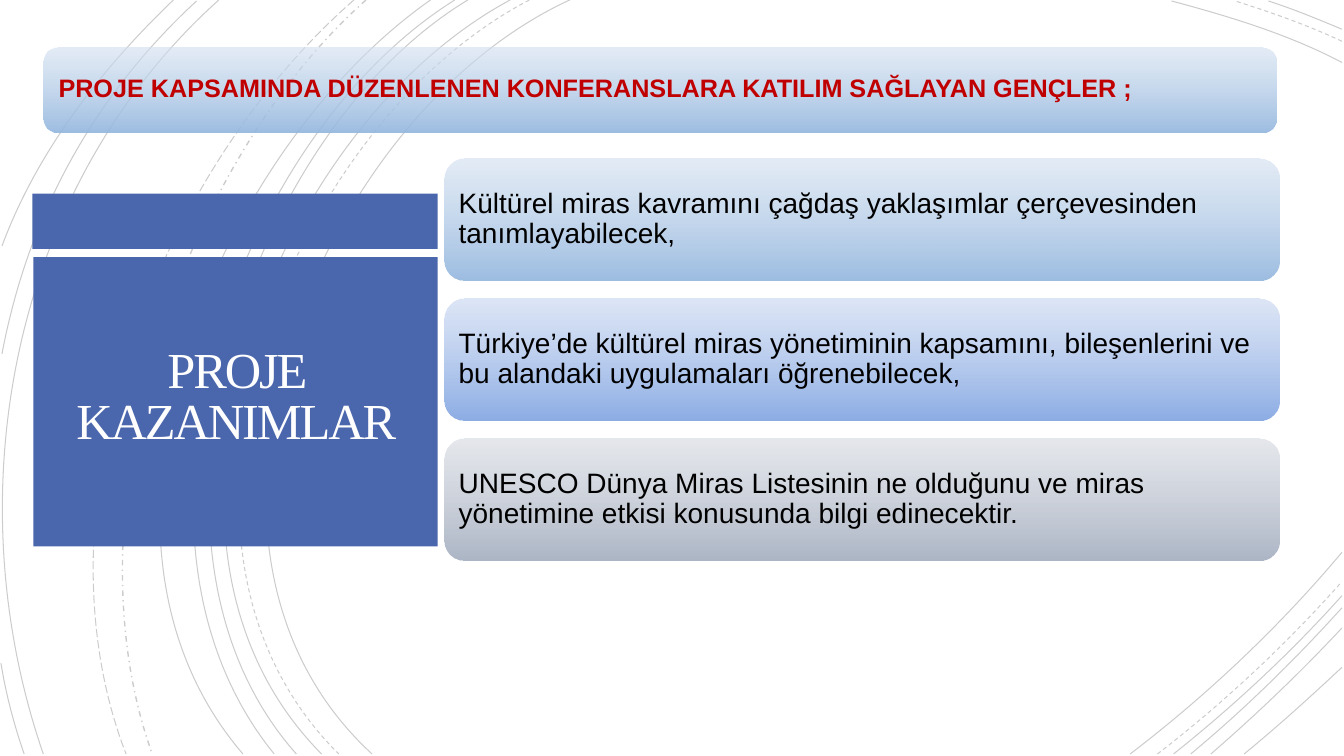
from dataclasses import dataclass

from lxml import etree
from pptx import Presentation
from pptx.dml.color import RGBColor
from pptx.enum.dml import MSO_LINE
from pptx.enum.shapes import MSO_SHAPE
from pptx.enum.text import MSO_ANCHOR, PP_ALIGN
from pptx.oxml.ns import qn
from pptx.shapes.autoshape import Shape
from pptx.slide import Slide
from pptx.text.text import TextFrame
from pptx.util import Inches, Pt

RECTANGLE = MSO_SHAPE.RECTANGLE
ROUNDED = MSO_SHAPE.ROUNDED_RECTANGLE
MIDDLE = MSO_ANCHOR.MIDDLE
LEFT, CENTER = PP_ALIGN.LEFT, PP_ALIGN.CENTER
SOLID, DASH = MSO_LINE.SOLID, MSO_LINE.DASH
DASH_DOT, LONG_DASH = MSO_LINE.DASH_DOT, MSO_LINE.LONG_DASH

COLUMNS, ROWS = 13.33, 7.5
CELL = Inches(1)
BOTTOM, EDGE = 7.48, 13.31
CARD_TOP, CARD_STEP = 1.57, 1.39
LINE_OPACITY, TOP_OPACITY, BASE_OPACITY = 20, 60, 92

COLORS = {
    "curve": "000000",
    "panel": "4A66AC",
    "title": "FFFEFF",
    "body": "000000",
    "heading": "C00000",
    "sky_top": "D1DFF0",
    "sky_base": "95B8DF",
    "blue_top": "C6D5F1",
    "blue_base": "83A6E3",
    "gray_top": "D4D8E0",
    "gray_base": "A6B0C1",
}

Point = tuple[float, float]


@dataclass(frozen=True)
class Area:
    column: float
    row: float
    columns: float
    rows: float

    def lengths(self) -> list[int]:
        return [cells(n) for n in (self.column, self.row, self.columns, self.rows)]


@dataclass(frozen=True)
class Curve:
    start: Point
    first_control: Point
    second_control: Point
    end: Point
    dash: MSO_LINE = SOLID
    width: float = 0.75


@dataclass(frozen=True)
class TextStyle:
    font: str
    size: int
    color: str
    bold: bool = False
    align: PP_ALIGN = LEFT
    line_spacing: float = 0.9
    tracking: int = 0


@dataclass(frozen=True)
class Card:
    area: Area
    text: str
    tint: str
    style: TextStyle
    side_inset: float = 0.08


TITLE = TextStyle("Times New Roman", 36, "title", align=CENTER, line_spacing=0.85, tracking=-150)
HEADING = TextStyle("Arial", 18, "heading", bold=True)
BODY = TextStyle("Arial", 20, "body")

CURVES = [
    Curve((5.65, 0), (3.15, 1.15), (1.43, 5.4), (3.69, BOTTOM)),
    Curve((EDGE, 0.62), (12.78, 0.34), (12.18, 0.16), (11.62, 0.01)),
    Curve((11.21, BOTTOM), (11.97, 6.9), (12.69, 6.22), (EDGE, 5.48)),
    Curve((5.25, 0), (2.85, 1.25), (1.23, 5.37), (3.36, BOTTOM), DASH),
    Curve((EDGE, 0.41), (12.97, 0.25), (12.6, 0.12), (12.25, 0.01), DASH),
    Curve((11.48, BOTTOM), (12.13, 6.98), (12.75, 6.4), (EDGE, 5.77), DASH),
    Curve((5.06, 0), (2.7, 1.27), (1.1, 5.37), (3.19, BOTTOM)),
    Curve((EDGE, 0.29), (13.07, 0.19), (12.83, 0.09), (12.58, 0.01)),
    Curve((11.64, BOTTOM), (12.23, 7.01), (12.8, 6.48), (EDGE, 5.91)),
    Curve((4.64, 0), (2.44, 1.33), (1.1, 5.41), (2.94, BOTTOM)),
    Curve((11.81, BOTTOM), (12.34, 7.04), (12.84, 6.55), (EDGE, 6.03)),
    Curve((4.51, 0), (2.31, 1.38), (0.97, 5.33), (2.72, BOTTOM)),
    Curve((12.01, BOTTOM), (12.46, 7.09), (12.9, 6.67), (EDGE, 6.23)),
    Curve((4.27, 0), (2.17, 1.47), (0.53, 5.29), (2.41, BOTTOM)),
    Curve((12.34, BOTTOM), (12.67, 7.21), (12.99, 6.92), (EDGE, 6.62)),
    Curve((3.63, 0), (1.76, 1.66), (0.65, 5.09), (1.51, BOTTOM), DASH_DOT, 1),
    Curve((3.51, 0), (1.57, 1.69), (0.29, 4.99), (1.25, BOTTOM), LONG_DASH),
    Curve((2.17, 0), (0.11, 1.85), (-0.46, 4.9), (0.43, BOTTOM)),
    Curve((1.95, 0.01), (0.92, 0.96), (0.28, 2.14), (0.02, 3.51)),
    Curve((0.01, 6.58), (0.06, 6.89), (0.14, 7.19), (0.24, BOTTOM)),
    Curve((1.72, 0), (1, 0.69), (0.37, 1.5), (0.02, 2.44)),
]

PANELS = [Area(0.32, 1.92, 4.02, 0.55), Area(0.33, 2.55, 4.01, 2.87)]
TITLE_AREA = Area(0.43, 2.61, 3.83, 2.69)

GAINS = [
    ("Kültürel miras kavramını çağdaş yaklaşımlar çerçevesinden tanımlayabilecek,", "sky"),
    ("Türkiye’de kültürel miras yönetiminin kapsamını, bileşenlerini ve "
     "bu alandaki uygulamaları öğrenebilecek,", "blue"),
    ("UNESCO Dünya Miras Listesinin ne olduğunu ve miras "
     "yönetimine etkisi konusunda bilgi edinecektir.", "gray"),
]
CARDS = [
    Card(Area(4.41, CARD_TOP + index * CARD_STEP, 8.28, 1.21), text, tint, BODY)
    for index, (text, tint) in enumerate(GAINS)
] + [
    Card(Area(0.43, 0.47, 12.23, 0.84),
         "PROJE KAPSAMINDA DÜZENLENEN KONFERANSLARA KATILIM SAĞLAYAN GENÇLER ;",
         "sky", HEADING, 0.11),
]


def cells(count: float) -> int:
    return round(count * CELL)


def color(name: str) -> RGBColor:
    return RGBColor.from_string(COLORS[name])


def set_opacities(shape: Shape, *opacities: int) -> None:
    for tone, opacity in zip(shape._element.iter(qn("a:srgbClr")), opacities):
        etree.SubElement(tone, qn("a:alpha")).set("val", str(opacity * 1000))


def draw_curve(page: Slide, curve: Curve) -> None:
    points = (curve.start, curve.first_control, curve.second_control, curve.end)
    start, *others = [(cells(x), cells(y)) for x, y in points]
    builder = page.shapes.build_freeform(*start)
    builder.add_line_segments(others, close=False)
    shape = builder.convert_to_shape()
    segments = list(shape._element.iter(qn("a:lnTo")))
    outline = segments[0].getparent()
    bezier = etree.SubElement(outline, qn("a:cubicBezTo"))
    for segment in segments:
        bezier.append(segment[0])
        outline.remove(segment)
    shape.shadow.inherit = False
    shape.fill.background()
    shape.line.color.rgb = color("curve")
    shape.line.width = Pt(curve.width)
    shape.line.dash_style = curve.dash
    set_opacities(shape, LINE_OPACITY)


def add_plain_shape(page: Slide, kind: MSO_SHAPE, area: Area) -> Shape:
    shape = page.shapes.add_shape(kind, *area.lengths())
    shape.shadow.inherit = False
    shape.line.fill.background()
    return shape


def write(frame: TextFrame, text: str, style: TextStyle, side: float, upright: float) -> None:
    frame.word_wrap = True
    frame.vertical_anchor = MIDDLE
    frame.margin_left = frame.margin_right = cells(side)
    frame.margin_top = frame.margin_bottom = cells(upright)
    para = frame.paragraphs[0]
    para.alignment = style.align
    para.line_spacing = style.line_spacing
    span = para.add_run()
    span.text = text
    span.font.name = style.font
    span.font.size = Pt(style.size)
    span.font.bold = style.bold
    span.font.color.rgb = color(style.color)
    if style.tracking:
        span.font._element.set("spc", str(style.tracking))


def draw_card(page: Slide, card: Card) -> None:
    box = add_plain_shape(page, ROUNDED, card.area)
    box.fill.gradient()
    box.fill.gradient_angle = 270
    for stop, place in zip(box.fill.gradient_stops, ("top", "base")):
        stop.color.rgb = color(f"{card.tint}_{place}")
    set_opacities(box, TOP_OPACITY, BASE_OPACITY)
    write(box.text_frame, card.text, card.style, card.side_inset, 0.08)


def main() -> None:
    deck = Presentation()
    deck.slide_width, deck.slide_height = cells(COLUMNS), cells(ROWS)
    page = deck.slides.add_slide(deck.slide_layouts[6])
    for curve in CURVES:
        draw_curve(page, curve)
    for area in PANELS:
        panel = add_plain_shape(page, RECTANGLE, area)
        panel.fill.solid()
        panel.fill.fore_color.rgb = color("panel")
    title = page.shapes.add_textbox(*TITLE_AREA.lengths())
    write(title.text_frame, "PROJE KAZANIMLAR", TITLE, 0.25, 0.25)
    for card in CARDS:
        draw_card(page, card)
    deck.save("out.pptx")


if __name__ == "__main__":
    main()
